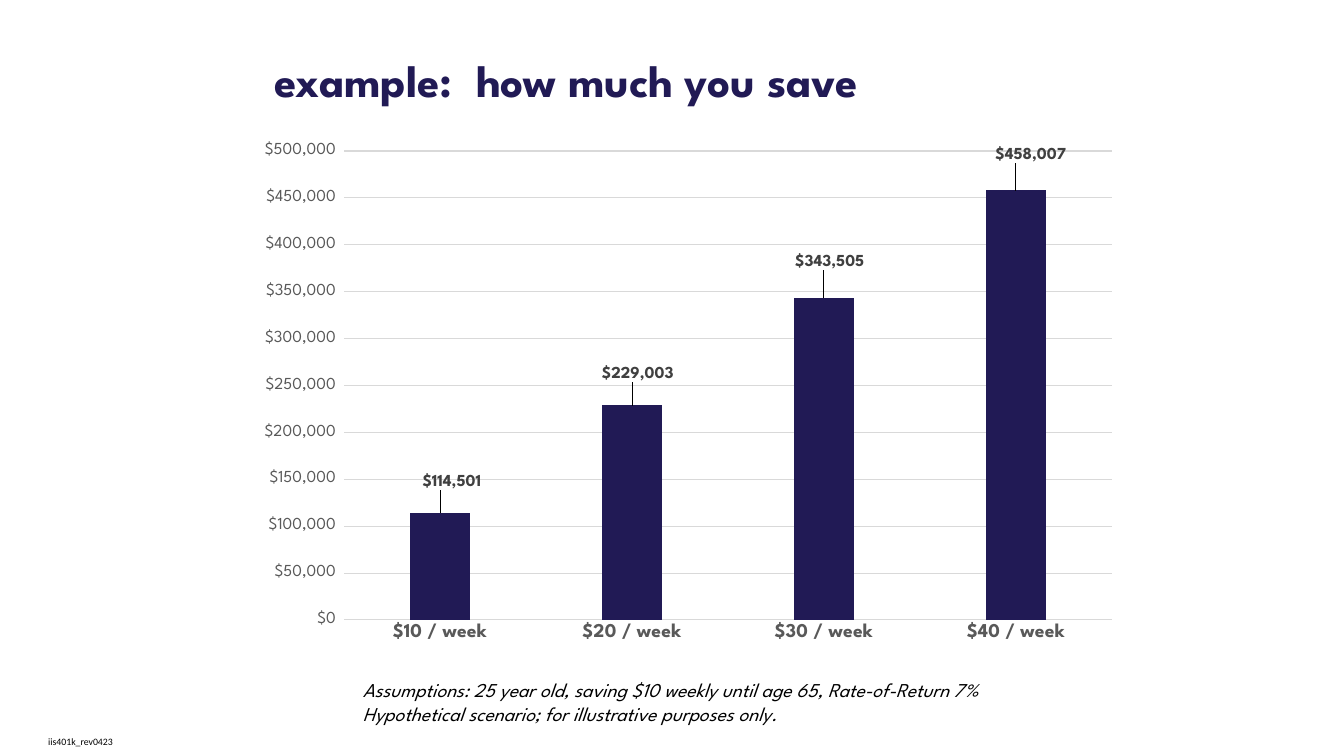
import pptx
import pptx.chart.data
import pptx.dml.color
import pptx.enum.chart
import pptx.enum.text
import pptx.oxml
import pptx.oxml.ns
import pptx.util

# Content
TITLE = "example:  how much you save"
SAVINGS = {
    "$10 / week": 114501,
    "$20 / week": 229003,
    "$30 / week": 343505,
    "$40 / week": 458007,
}
ASSUMPTIONS = [
    "Assumptions: 25 year old, saving $10 weekly until age 65, Rate-of-Return 7%",
    "Hypothetical scenario; for illustrative purposes only.",
]
REVISION = "iis401k_rev0423"

# Format
COLORS = {
    "navy": "211A55", "black": "000000", "label": "404040",
    "axis": "595959", "grid": "D9D9D9",
}
HEADING_FONT, SMALL_FONT = "League Spartan", "Calibri"
DOLLARS = '"$"#,##0_);[Red]\\("$"#,##0\\)'

# Boxes as left, top, width, height in px
PX = 914400 / 100.8
SLIDE_SIZE = (1344, 756)
TITLE_BOX = (264, 48, 848, 65)
CHART_BOX = (247, 134, 883, 519)
PLOT_BOX = (344, 151, 768, 469)
ASSUMPTIONS_BOX = (353, 673, 937, 105)
REVISION_BOX = (28, 726, 105, 31)
# Shift of each value label from its usual place above the bar
LABEL_SHIFTS = [(14, -18), (8, -19), (8, -23), (17, -23)]


def emu(*lengths):
    return [round(length * PX) for length in lengths]


def rgb(name):
    return pptx.dml.color.RGBColor.from_string(COLORS[name])


def set_font(font, size, color, name=HEADING_FONT, bold=False, italic=False):
    font.name, font.size = name, pptx.util.Pt(size)
    font.bold, font.italic = bold, italic
    font.color.rgb = rgb(color)


def write_text(shape, lines, box, align="LEFT", anchor="TOP", grow=True, **font_format):
    shape.left, shape.top, shape.width, shape.height = emu(*box)
    frame = shape.text_frame
    frame.word_wrap = True
    sizes = pptx.enum.text.MSO_AUTO_SIZE
    frame.auto_size = sizes.SHAPE_TO_FIT_TEXT if grow else sizes.NONE
    frame.vertical_anchor = pptx.enum.text.MSO_ANCHOR[anchor]
    for index, line in enumerate(lines):
        paragraph = frame.add_paragraph() if index else frame.paragraphs[0]
        paragraph.alignment = pptx.enum.text.PP_ALIGN[align]
        run = paragraph.add_run()
        run.text = line
        set_font(run.font, **font_format)


def manual_layout(**values):
    parts = "".join(f'<c:{tag} val="{value}"/>' for tag, value in values.items())
    return pptx.oxml.parse_xml(
        f'<c:layout {pptx.oxml.ns.nsdecls("c")}>'
        f"<c:manualLayout>{parts}</c:manualLayout></c:layout>"
    )


def style_line(line, color):
    line.color.rgb = rgb(color)
    line.width = pptx.util.Pt(0.75)


def add_savings_chart(slide):
    data = pptx.chart.data.CategoryChartData(number_format=DOLLARS)
    data.categories = list(SAVINGS)
    data.add_series("Series 1", list(SAVINGS.values()))
    kind = pptx.enum.chart.XL_CHART_TYPE.COLUMN_CLUSTERED
    chart = slide.shapes.add_chart(kind, *emu(*CHART_BOX), data).chart
    chart.has_legend = chart.has_title = False
    set_font(chart.font, 10, "black", SMALL_FONT)

    # Plot area as shares of the chart
    left, top, width, height = CHART_BOX
    plot_left, plot_top, plot_width, plot_height = PLOT_BOX
    plot_area = chart.plots[0]._element.getparent()
    for old_layout in plot_area.findall(pptx.oxml.ns.qn("c:layout")):
        plot_area.remove(old_layout)
    plot_area.insert(0, manual_layout(
        layoutTarget="inner", xMode="edge", yMode="edge",
        x=round((plot_left - left) / width, 4),
        y=round((plot_top - top) / height, 4),
        w=round(plot_width / width, 4),
        h=round(plot_height / height, 4),
    ))

    # Axes
    category_axis, value_axis = chart.category_axis, chart.value_axis
    for axis in (category_axis, value_axis):
        axis.major_tick_mark = pptx.enum.chart.XL_TICK_MARK.NONE
        axis.minor_tick_mark = pptx.enum.chart.XL_TICK_MARK.NONE
    set_font(category_axis.tick_labels.font, 14, "axis", bold=True)
    style_line(category_axis.format.line, "grid")
    set_font(value_axis.tick_labels.font, 12, "axis")
    value_axis.tick_labels.number_format = DOLLARS
    value_axis.tick_labels.number_format_is_linked = False
    value_axis.minimum_scale, value_axis.maximum_scale = 0, 500000
    value_axis.major_unit = 50000
    value_axis.format.line.fill.background()
    style_line(value_axis.major_gridlines.format.line, "grid")

    # Bars and their labels
    plot = chart.plots[0]
    plot.gap_width = 219
    plot.vary_by_categories = False
    series = plot.series[0]
    series.format.fill.solid()
    series.format.fill.fore_color.rgb = rgb("navy")
    outside = pptx.enum.chart.XL_LABEL_POSITION.OUTSIDE_END
    labels = series.data_labels
    labels.show_value = True
    labels.number_format = DOLLARS
    labels.number_format_is_linked = False
    labels.position = outside
    set_font(labels.font, 12, "label", bold=True)
    for index, (shift_x, shift_y) in enumerate(LABEL_SHIFTS):
        label = series.points[index].data_label
        label.position = outside
        set_font(label.font, 12, "label", bold=True)
        element = labels._element.findall(pptx.oxml.ns.qn("c:dLbl"))[index]
        element.insert(1, manual_layout(
            x=round(shift_x / width, 4), y=round(shift_y / height, 4)))


def main():
    presentation = pptx.Presentation()
    presentation.slide_width, presentation.slide_height = emu(*SLIDE_SIZE)
    slide = presentation.slides.add_slide(presentation.slide_layouts.get_by_name("Title Only"))

    write_text(slide.shapes.title, [TITLE], TITLE_BOX, size=32, color="navy", bold=True)
    write_text(slide.shapes.add_textbox(0, 0, 0, 0), ASSUMPTIONS, ASSUMPTIONS_BOX,
               size=14, color="black", italic=True)
    add_savings_chart(slide)
    write_text(slide.shapes.add_textbox(0, 0, 0, 0), [REVISION], REVISION_BOX,
               align="CENTER", anchor="MIDDLE", grow=False,
               size=7, color="black", name=SMALL_FONT)

    presentation.save("out.pptx")


if __name__ == "__main__":
    main()
